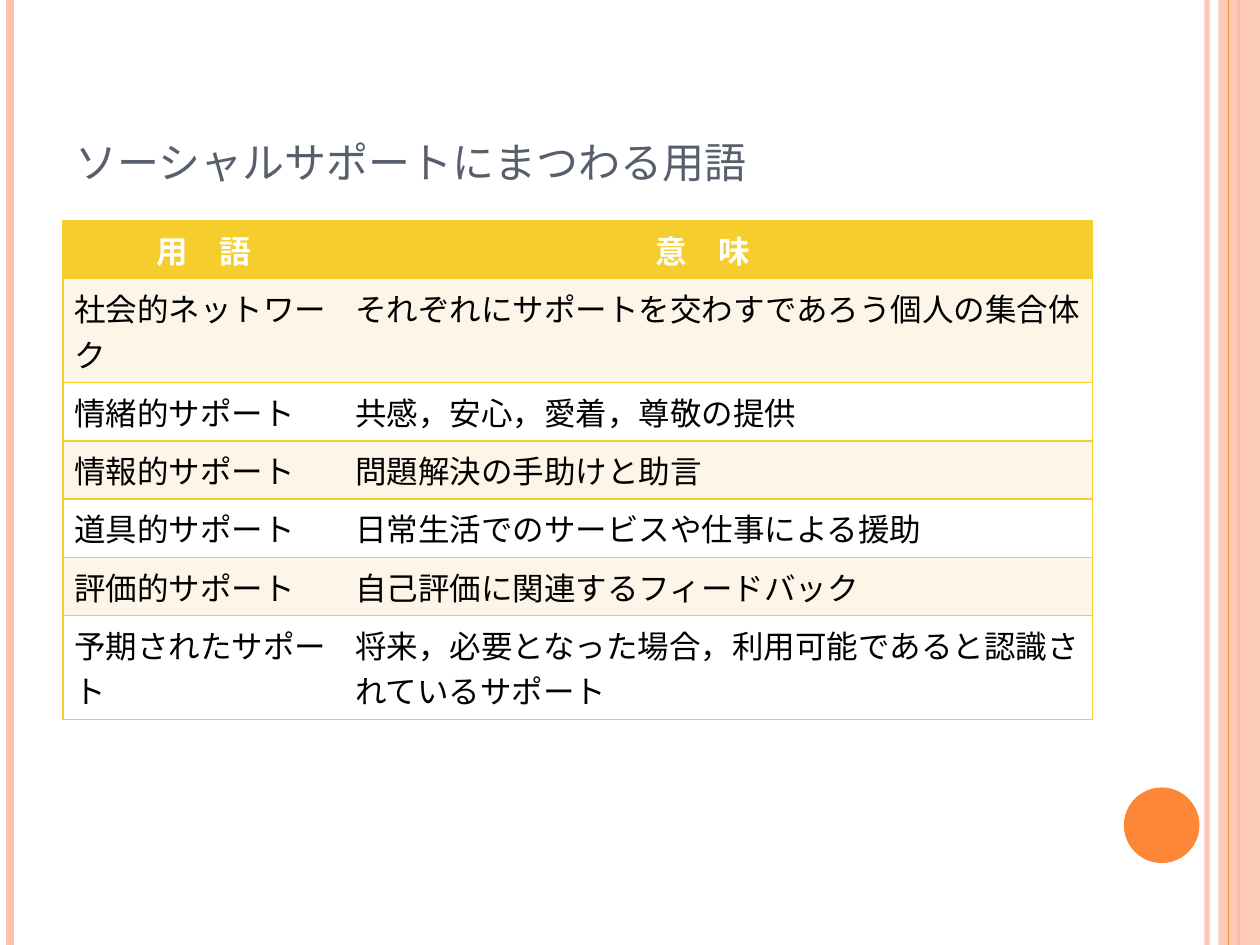
"""Build a slide with a table of social support terms."""
from lxml import etree
from pptx import Presentation
from pptx.dml import color
from pptx.enum import lang, shapes, text
from pptx.oxml import ns
from pptx.util import Inches, Pt


def paint(fill, hue, alpha=100):
    fill.solid()
    fill.fore_color.rgb = color.RGBColor.from_string(hue)
    if alpha < 100:
        tone = fill._xPr.find(ns.qn("a:solidFill"))[0]
        etree.SubElement(tone, ns.qn("a:alpha"), val=str(alpha * 1000))


def write(frame, words, size=18, hue="000000", bold=False, align=text.PP_ALIGN.LEFT, caps="none"):
    frame.word_wrap = True
    para = frame.paragraphs[0]
    para.alignment = align
    run = para.add_run()
    run.text = words
    run.font.size = Pt(size)
    run.font.name = "Cambria"
    run.font.bold = bold
    run.font.language_id = lang.MSO_LANGUAGE_ID.JAPANESE
    paint(run.font.fill, hue)
    run.font._element.set("cap", caps)


ORANGE, PEACH, GOLD = "FE8637", "FEC3AE", "F5CD2D"

deck = Presentation()
deck.slide_width, deck.slide_height = Inches(10), Inches(7.5)
slide = deck.slides.add_slide(deck.slide_layouts[5])

stripes = [
    (9.58, PEACH, 3, 93),
    (0.08, PEACH, 4.5, 100),
    (9.83, ORANGE, 1.5, 100),
    (9.75, ORANGE, 0.75, 100),
]
forms = [
    (shapes.MSO_SHAPE.RECTANGLE, 9.67, 0, 0.33, 7.5, PEACH, 87),
    (shapes.MSO_SHAPE.OVAL, 8.92, 6.25, 0.6, 0.6, ORANGE, 100),
]

for x, hue, width, alpha in stripes:
    if x == 9.75:
        for kind, left, top, wide, high, tint, clear in forms:
            form = slide.shapes.add_shape(kind, Inches(left), Inches(top), Inches(wide), Inches(high))
            form.shadow.inherit = False
            form.line.fill.background()
            paint(form.fill, tint, clear)
    line = slide.shapes.add_connector(
        shapes.MSO_CONNECTOR.STRAIGHT, Inches(x), Inches(0), Inches(x), Inches(7.5))
    line.line.width = Pt(width)
    paint(line.line.fill, hue, alpha)
    etree.SubElement(line._element.spPr, ns.qn("a:effectLst"))

title = slide.shapes.title
title.left, title.top = Inches(0.5), Inches(0.3)
title.width, title.height = Inches(8.17), Inches(1.25)
title.text_frame.vertical_anchor = text.MSO_ANCHOR.BOTTOM
write(title.text_frame, "ソーシャルサポートにまつわる用語", size=30, hue="575F6D", caps="small")

terms = [
    ("用　語", "意　味　"),
    ("社会的ネットワーク", "それぞれにサポートを交わすであろう個人の集合体"),
    ("情緒的サポート", "共感，安心，愛着，尊敬の提供"),
    ("情報的サポート", "問題解決の手助けと助言"),
    ("道具的サポート", "日常生活でのサービスや仕事による援助"),
    ("評価的サポート", "自己評価に関連するフィードバック"),
    ("予期されたサポート", "将来，必要となった場合，利用可能であると認識されているサポート"),
]
table = slide.shapes.add_table(
    len(terms), 2, Inches(0.5), Inches(1.75), Inches(8.17), Inches(0.41 * len(terms))).table
table.horz_banding = False
for col, width in zip(table.columns, (2.23, 5.94)):
    col.width = Inches(width)

for r, row in enumerate(terms):
    table.rows[r].height = Inches(0.41)
    for c, words in enumerate(row):
        cell = table.cell(r, c)
        cell.margin_left = cell.margin_right = Inches(0.09)
        cell.margin_top = cell.margin_bottom = Inches(0.05)
        inner = "R" if c == 0 else "L"
        for side in "LRTB":
            edge = etree.SubElement(cell._tc.get_or_add_tcPr(), ns.qn(f"a:ln{side}"), w=str(Pt(1)))
            if side == inner:
                etree.SubElement(edge, ns.qn("a:noFill"))
            else:
                solid = etree.SubElement(edge, ns.qn("a:solidFill"))
                etree.SubElement(solid, ns.qn("a:srgbClr"), val=GOLD)
        if r == 0:
            paint(cell.fill, GOLD)
            write(cell.text_frame, words, hue="FFFFFF", bold=True, align=text.PP_ALIGN.CENTER)
        else:
            paint(cell.fill, "FDF6E8" if r % 2 else "FFFFFF")
            write(cell.text_frame, words)

deck.save("out.pptx")
